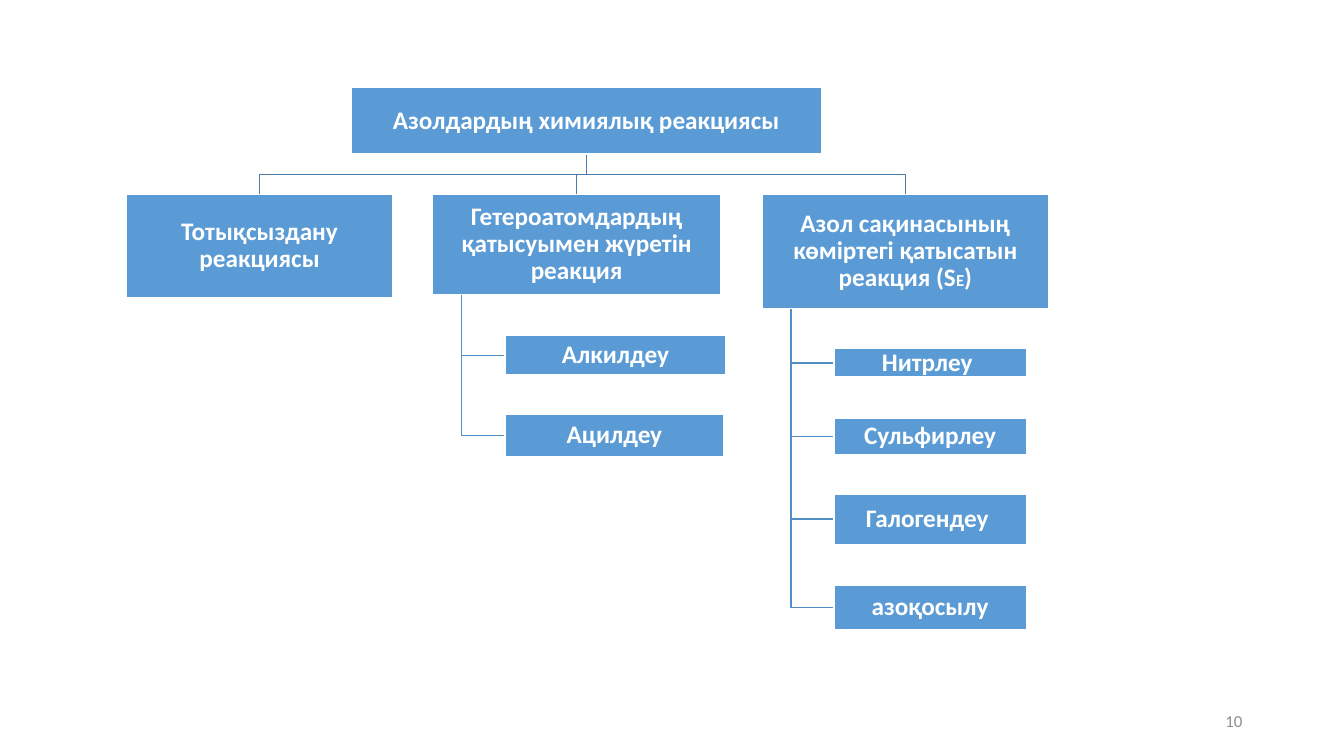
from dataclasses import dataclass, field

from pptx import Presentation
from pptx.dml.color import RGBColor
from pptx.enum.shapes import MSO_SHAPE
from pptx.enum.text import MSO_ANCHOR, PP_ALIGN
from pptx.slide import Slide
from pptx.util import Inches, Pt

WHITE = RGBColor(0xFF, 0xFF, 0xFF)
BOX_BLUE = RGBColor(0x5B, 0x9B, 0xD5)
BRANCH_BLUE = RGBColor(0x49, 0x7C, 0xAB)
LEAF_BLUE = RGBColor(0x53, 0x8D, 0xC1)
GREY = RGBColor(0x8C, 0x8C, 0x8C)

FONT = "Calibri"
TEXT_SIZE = 18
SMALL_SIZE = 12
TRUNK_SHARE = 0.1  # trunk position as a share of the parent's width


@dataclass
class Box:
    left: float
    top: float
    width: float
    height: float
    runs: list[tuple[str, int]]
    children: list["Box"] = field(default_factory=list)

    @property
    def center(self) -> float:
        return self.left + self.width / 2

    @property
    def middle(self) -> float:
        return self.top + self.height / 2

    @property
    def bottom(self) -> float:
        return self.top + self.height


def box(left: float, top: float, width: float, height: float, text: str,
        children: list[Box] | None = None) -> Box:
    return Box(left, top, width, height, [(text, TEXT_SIZE)], children or [])


# Reaction tree
HETEROATOM = box(4.29, 1.93, 2.86, 0.99, "Гетероатомдардың қатысуымен жүретін реакция", [
    box(5.01, 3.33, 2.19, 0.39, "Алкилдеу"),
    box(5.01, 4.11, 2.17, 0.42, "Ацилдеу"),
])
RING_CARBON = Box(
    7.56, 1.93, 2.84, 1.13,
    [("Азол сақинасының көміртегі қатысатын реакция (S", TEXT_SIZE),
     ("E", SMALL_SIZE), (")", TEXT_SIZE)],
    [box(8.27, top, 1.91, height, text) for top, height, text in (
        (3.46, 0.28, "Нитрлеу "),
        (4.15, 0.36, "Сульфирлеу"),
        (4.9, 0.5, "Галогендеу "),
        (5.81, 0.44, "азоқосылу"),
    )],
)
ROOT = box(3.48, 0.87, 4.67, 0.66, "Азолдардың химиялық реакциясы", [
    box(1.25, 1.93, 2.65, 1.02, "Тотықсыздану реакциясы"),
    HETEROATOM,
    RING_CARBON,
])


def draw_path(slide: Slide, points: list[tuple[float, float]], color: RGBColor) -> None:
    start, *rest = [(Inches(x), Inches(y)) for x, y in points]
    builder = slide.shapes.build_freeform(*start)
    builder.add_line_segments(rest, close=False)
    shape = builder.convert_to_shape()
    shape.shadow.inherit = False
    shape.fill.background()
    shape.line.color.rgb = color
    shape.line.width = Pt(1)


def draw_branch(slide: Slide, parent: Box, child: Box) -> None:
    bend = (parent.bottom + child.top) / 2
    draw_path(slide, [(parent.center, parent.bottom), (parent.center, bend),
                      (child.center, bend), (child.center, child.top)], BRANCH_BLUE)


def draw_leaf_line(slide: Slide, parent: Box, leaf: Box) -> None:
    trunk = parent.left + TRUNK_SHARE * parent.width
    draw_path(slide, [(trunk, parent.bottom), (trunk, leaf.middle),
                      (leaf.left, leaf.middle)], LEAF_BLUE)


def draw_box(slide: Slide, item: Box) -> None:
    shape = slide.shapes.add_shape(
        MSO_SHAPE.RECTANGLE, Inches(item.left), Inches(item.top),
        Inches(item.width), Inches(item.height))
    shape.shadow.inherit = False
    shape.fill.solid()
    shape.fill.fore_color.rgb = BOX_BLUE
    shape.line.color.rgb = WHITE
    shape.line.width = Pt(1)

    frame = shape.text_frame
    frame.word_wrap = True
    frame.vertical_anchor = MSO_ANCHOR.MIDDLE
    frame.margin_left = frame.margin_right = Inches(0.01)
    frame.margin_top = frame.margin_bottom = Inches(0.01)
    paragraph = frame.paragraphs[0]
    paragraph.alignment = PP_ALIGN.CENTER
    paragraph.line_spacing = 0.9
    paragraph.font.name = FONT
    paragraph.font.bold = True
    paragraph.font.color.rgb = WHITE
    for text, size in item.runs:
        run = paragraph.add_run()
        run.text = text
        run.font.size = Pt(size)

    for child in item.children:
        draw_box(slide, child)


def draw_page_number(slide: Slide, number: str) -> None:
    frame = slide.shapes.add_textbox(
        Inches(9.42), Inches(6.95), Inches(3), Inches(0.4)).text_frame
    frame.word_wrap = True
    frame.vertical_anchor = MSO_ANCHOR.MIDDLE
    paragraph = frame.paragraphs[0]
    paragraph.text = number
    paragraph.alignment = PP_ALIGN.RIGHT
    paragraph.font.name = FONT
    paragraph.font.size = Pt(SMALL_SIZE)
    paragraph.font.color.rgb = GREY


def main() -> None:
    presentation = Presentation()
    presentation.slide_width = Inches(13.33)
    presentation.slide_height = Inches(7.5)
    slide = presentation.slides.add_slide(presentation.slide_layouts[6])

    draw_page_number(slide, "10")

    # Lines lie behind the boxes
    for group in ROOT.children:
        draw_branch(slide, ROOT, group)
        for leaf in group.children:
            draw_leaf_line(slide, group, leaf)
    draw_box(slide, ROOT)

    presentation.save("out.pptx")


if __name__ == "__main__":
    main()
